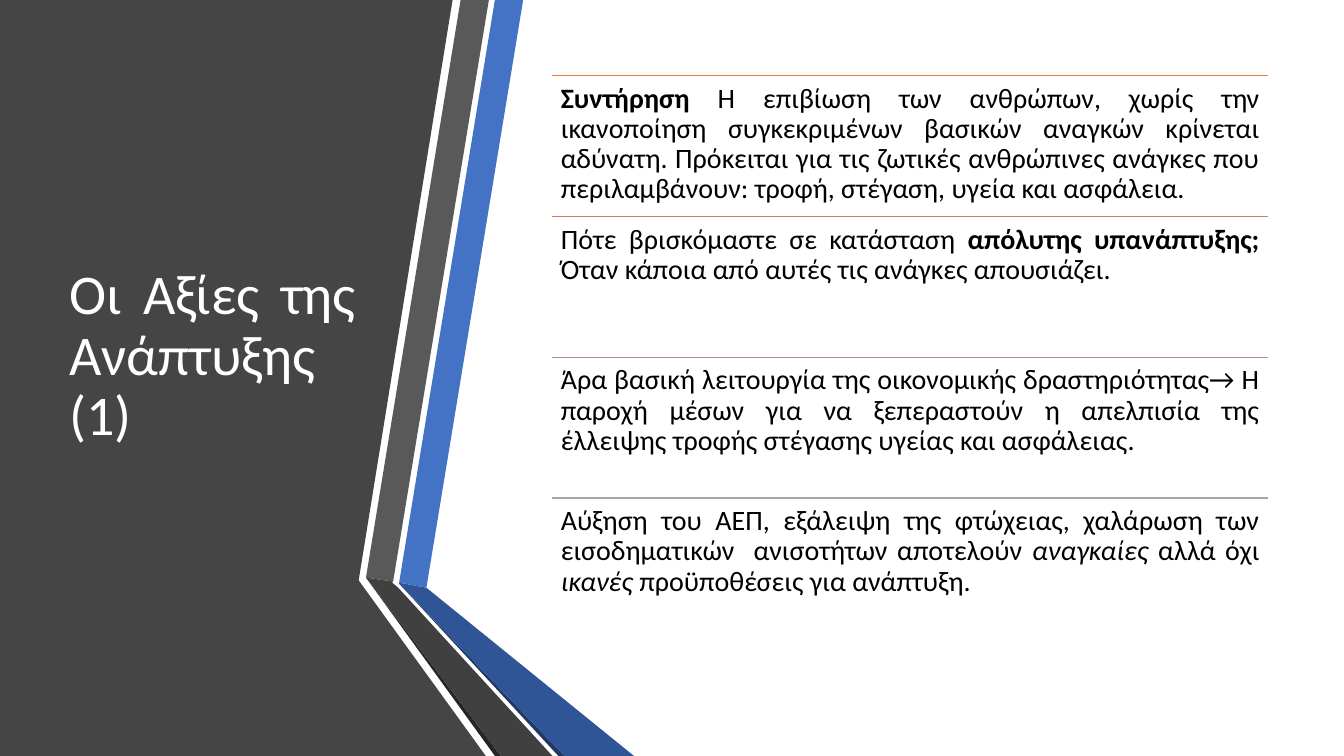
from lxml.etree import SubElement
from pptx import Presentation
from pptx.dml.color import RGBColor as Rgb
from pptx.enum.shapes import MSO_CONNECTOR as Link
from pptx.enum.text import MSO_ANCHOR as Anchor, PP_ALIGN as Align
from pptx.oxml.ns import qn
from pptx.util import Pt

COLORS = {
    "panel": "454545", "blue": "4472C4", "grey": "595959",
    "black": "262626", "navy": "203864", "deep": "2F5597",
    "dark": "404040", "white": "FFFFFF", "text": "000000",
    "rule1": "ED7D31", "rule2": "D17B5C", "rule3": "B98A82", "rule4": "A5A5A5",
}


def color(name):
    return Rgb.from_string(COLORS[name])


def add_text(box, runs, size, ink, inset, anchor):
    """Fill a box with one justified paragraph of (text, style) runs."""
    frame = box.text_frame
    frame.word_wrap = True
    frame.vertical_anchor = anchor
    frame.margin_left = frame.margin_right = Pt(inset)
    frame.margin_top = frame.margin_bottom = Pt(min(inset, 6))
    para = frame.paragraphs[0]
    para.alignment = Align.JUSTIFY
    para.line_spacing = 0.9
    for text, style in runs:
        run = para.add_run()
        run.text = text
        font = run.font
        font.name, font.size = "Calibri", Pt(size)
        font.color.rgb = color(ink)
        font.bold, font.italic = style == "bold", style == "italic"


deck = Presentation()
deck.slide_width, deck.slide_height = Pt(960), Pt(540)
slide = deck.slides.add_slide(deck.slide_layouts[6])
shapes = slide.shapes

# Side panel and folded ribbons, back to front
bands = [
    ("panel", [(0, 0), (323.3, 0), (256.3, 414), (256.3, 414.7), (347, 540), (0, 540)]),
    ("blue", [(285.1, 416.2), (304.6, 419.8), (373.7, 0), (353.5, 0)]),
    ("grey", [(349.2, 0), (329, 0), (261.4, 412.6), (280.8, 415.4)]),
    ("black", [(261.4, 412.6), (353.5, 540), (357.8, 540)]),
    ("navy", [(285.1, 416.9), (398.9, 540), (403.2, 540)]),
    ("deep", [(285.1, 416.9), (403.2, 540), (452.9, 540), (304.6, 419.8), (285.1, 416.2)]),
    ("dark", [(394.6, 540), (284.4, 419.8), (280.1, 416.2), (280.8, 415.4),
              (261.4, 412.6), (357.8, 540)]),
]
for name, points in bands:
    spots = [(Pt(x), Pt(y)) for x, y in points]
    pen = shapes.build_freeform(*spots[0])
    pen.add_line_segments(spots[1:], close=True)
    band = pen.convert_to_shape()
    band.shadow.inherit = False
    band.fill.solid()
    band.fill.fore_color.rgb = color(name)
    band.line.fill.background()

title = shapes.add_textbox(Pt(42.5), Pt(54), Pt(218.9), Pt(401.8))
add_text(title, [("Οι Αξίες της Ανάπτυξης (1)", "")], 40, "white", 7.2, Anchor.MIDDLE)

# Ruled list of values
rows = [
    [("Συντήρηση ", "bold"),
     ("Η επιβίωση των ανθρώπων, χωρίς την ικανοποίηση συγκεκριμένων βασικών "
      "αναγκών κρίνεται αδύνατη. Πρόκειται για τις ζωτικές ανθρώπινες ανάγκες "
      "που περιλαμβάνουν: τροφή, στέγαση, υγεία και ασφάλεια.", "")],
    [("Πότε βρισκόμαστε σε κατάσταση ", ""),
     ("απόλυτης υπανάπτυξης; ", "bold"),
     ("Όταν κάποια από αυτές τις ανάγκες απουσιάζει.", "")],
    [("Άρα βασική λειτουργία της οικονομικής δραστηριότητας→ Η παροχή μέσων "
      "για να ξεπεραστούν η απελπισία της έλλειψης τροφής στέγασης υγείας "
      "και ασφάλειας.", "")],
    [("Αύξηση του ΑΕΠ, εξάλειψη της φτώχειας, χαλάρωση των εισοδηματικών  "
      "ανισοτήτων αποτελούν ", ""),
     ("αναγκαίες ", "italic"),
     ("αλλά όχι ", ""),
     ("ικανές", "italic"),
     (" προϋποθέσεις για ανάπτυξη.", "")],
]
left, top, width, step = 394.6, 54, 511.2, 100.6
for i, runs in enumerate(rows):
    y = Pt(top + i * step)
    rule = shapes.add_connector(Link.STRAIGHT, Pt(left), y, Pt(left + width), y)
    rule.line.color.rgb = color(f"rule{i + 1}")
    rule.line.width = Pt(1)
    SubElement(rule._element.spPr, qn("a:effectLst"))
    box = shapes.add_textbox(Pt(left), y, Pt(width), Pt(step))
    add_text(box, runs, 20, "text", 6, Anchor.TOP)

deck.save("out.pptx")
